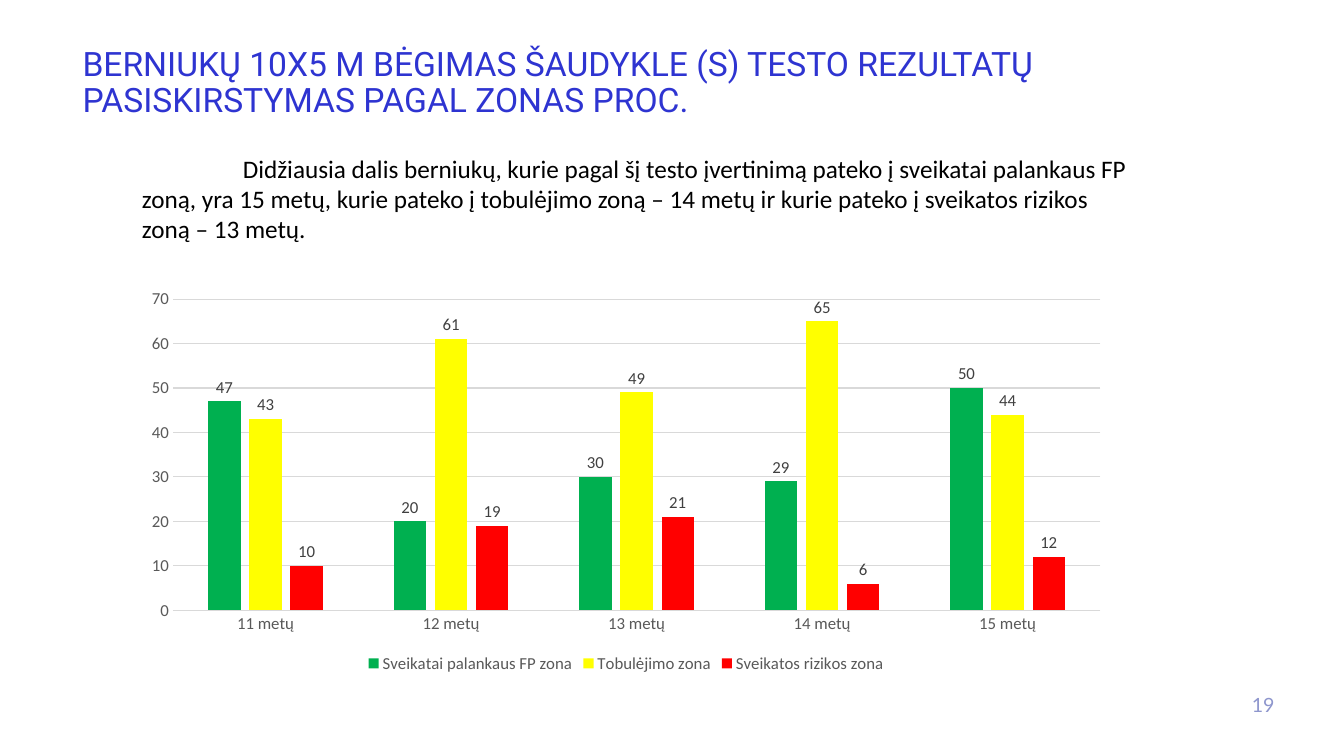
from dataclasses import dataclass

from pptx import Presentation
from pptx.chart.data import CategoryChartData
from pptx.dml.color import RGBColor
from pptx.enum.chart import XL_CHART_TYPE, XL_LABEL_POSITION, XL_LEGEND_POSITION, XL_TICK_MARK
from pptx.enum.text import MSO_ANCHOR, PP_ALIGN
from pptx.util import Inches, Pt

COLUMNS = XL_CHART_TYPE.COLUMN_CLUSTERED
OUTSIDE_END = XL_LABEL_POSITION.OUTSIDE_END
LEGEND_BOTTOM = XL_LEGEND_POSITION.BOTTOM
NO_TICK = XL_TICK_MARK.NONE
TOP, MIDDLE = MSO_ANCHOR.TOP, MSO_ANCHOR.MIDDLE
LEFT, RIGHT = PP_ALIGN.LEFT, PP_ALIGN.RIGHT


@dataclass(frozen=True)
class Theme:
    title_font: str = "Roboto"
    body_font: str = "Calibri"
    number_font: str = "Lato"
    title_size: int = 24
    body_size: int = 18
    number_size: int = 14
    chart_size: int = 12
    background: str = "FFFFFF"
    title: str = "2E34D1"
    body: str = "000000"
    number: str = "8E96CD"
    axis_text: str = "595959"
    value_label: str = "404040"
    grid: str = "D9D9D9"
    healthy: str = "00B050"
    improving: str = "FFFF00"
    risk: str = "FF0000"


THEME = Theme()

TITLE = "BERNIUKŲ 10X5 M BĖGIMAS ŠAUDYKLE (S) TESTO REZULTATŲ PASISKIRSTYMAS PAGAL ZONAS PROC."
SUMMARY = (
    "Didžiausia dalis berniukų, kurie pagal šį testo įvertinimą pateko į sveikatai "
    "palankaus FP zoną, yra 15 metų, kurie pateko į tobulėjimo zoną – 14 metų ir "
    "kurie pateko į sveikatos rizikos zoną – 13 metų."
)
AGES = ["11 metų", "12 metų", "13 metų", "14 metų", "15 metų"]
ZONES = [
    ("Sveikatai palankaus FP zona", (47, 20, 30, 29, 50), THEME.healthy),
    ("Tobulėjimo zona", (43, 61, 49, 65, 44), THEME.improving),
    ("Sveikatos rizikos zona", (10, 19, 21, 6, 12), THEME.risk),
]


def style_font(font, name, size, color):
    font.name = name
    font.size = Pt(size)
    font.color.rgb = RGBColor.from_string(color)


def style_chart_font(font, color):
    style_font(font, THEME.body_font, THEME.chart_size, color)


def style_line(line, color):
    line.color.rgb = RGBColor.from_string(color)
    line.width = Pt(0.75)


def add_text(slide, box, text, *, font, size, color, align=LEFT, anchor=TOP,
             line_spacing=1.0, first_indent=0):
    """Add a wrapped text box; box is left, top, width, height in inches."""
    shape = slide.shapes.add_textbox(*map(Inches, box))
    frame = shape.text_frame
    frame.word_wrap = True
    frame.vertical_anchor = anchor
    paragraph = frame.paragraphs[0]
    paragraph.alignment = align
    paragraph.line_spacing = line_spacing
    if first_indent:
        properties = paragraph._p.get_or_add_pPr()
        properties.set("marL", "0")
        properties.set("indent", str(Inches(first_indent)))
    run = paragraph.add_run()
    run.text = text
    style_font(run.font, font, size, color)


def style_axes(chart):
    for axis in (chart.category_axis, chart.value_axis):
        axis.major_tick_mark = axis.minor_tick_mark = NO_TICK
        style_chart_font(axis.tick_labels.font, THEME.axis_text)
    chart.category_axis.has_major_gridlines = False
    style_line(chart.category_axis.format.line, THEME.grid)
    value_axis = chart.value_axis
    value_axis.minimum_scale, value_axis.maximum_scale, value_axis.major_unit = 0, 70, 10
    value_axis.format.line.fill.background()
    style_line(value_axis.major_gridlines.format.line, THEME.grid)


def add_zone_chart(slide, box):
    data = CategoryChartData(number_format="0")
    data.categories = AGES
    for name, values, _ in ZONES:
        data.add_series(name, values)
    chart = slide.shapes.add_chart(COLUMNS, *map(Inches, box), data).chart
    chart.has_title = False
    style_chart_font(chart.font, THEME.body)

    chart.has_legend = True
    chart.legend.position = LEGEND_BOTTOM
    chart.legend.include_in_layout = False
    style_chart_font(chart.legend.font, THEME.axis_text)
    style_axes(chart)

    plot = chart.plots[0]
    plot.gap_width, plot.overlap = 219, -27
    plot.vary_by_categories = False
    for series, (_, _, color) in zip(plot.series, ZONES):
        series.format.fill.solid()
        series.format.fill.fore_color.rgb = RGBColor.from_string(color)
        series.invert_if_negative = False
        labels = series.data_labels
        labels.show_value = True
        labels.position = OUTSIDE_END
        style_chart_font(labels.font, THEME.value_label)


def build_results_slide(presentation):
    slide = presentation.slides.add_slide(presentation.slide_layouts[6])
    slide.background.fill.solid()
    slide.background.fill.fore_color.rgb = RGBColor.from_string(THEME.background)
    add_text(slide, (0.72, 0.42, 11.41, 1.38), TITLE, font=THEME.title_font,
             size=THEME.title_size, color=THEME.title, line_spacing=0.9)
    add_text(slide, (12.22, 6.79, 0.52, 0.4), "19", font=THEME.number_font,
             size=THEME.number_size, color=THEME.number, align=RIGHT, anchor=MIDDLE)
    add_zone_chart(slide, (1.31, 2.79, 9.8, 3.93))
    add_text(slide, (1.31, 1.47, 10.05, 1.01), SUMMARY, font=THEME.body_font,
             size=THEME.body_size, color=THEME.body, first_indent=1)


def main():
    presentation = Presentation()
    presentation.slide_width = Inches(13.33)
    presentation.slide_height = Inches(7.5)
    build_results_slide(presentation)
    presentation.save("out.pptx")


if __name__ == "__main__":
    main()
